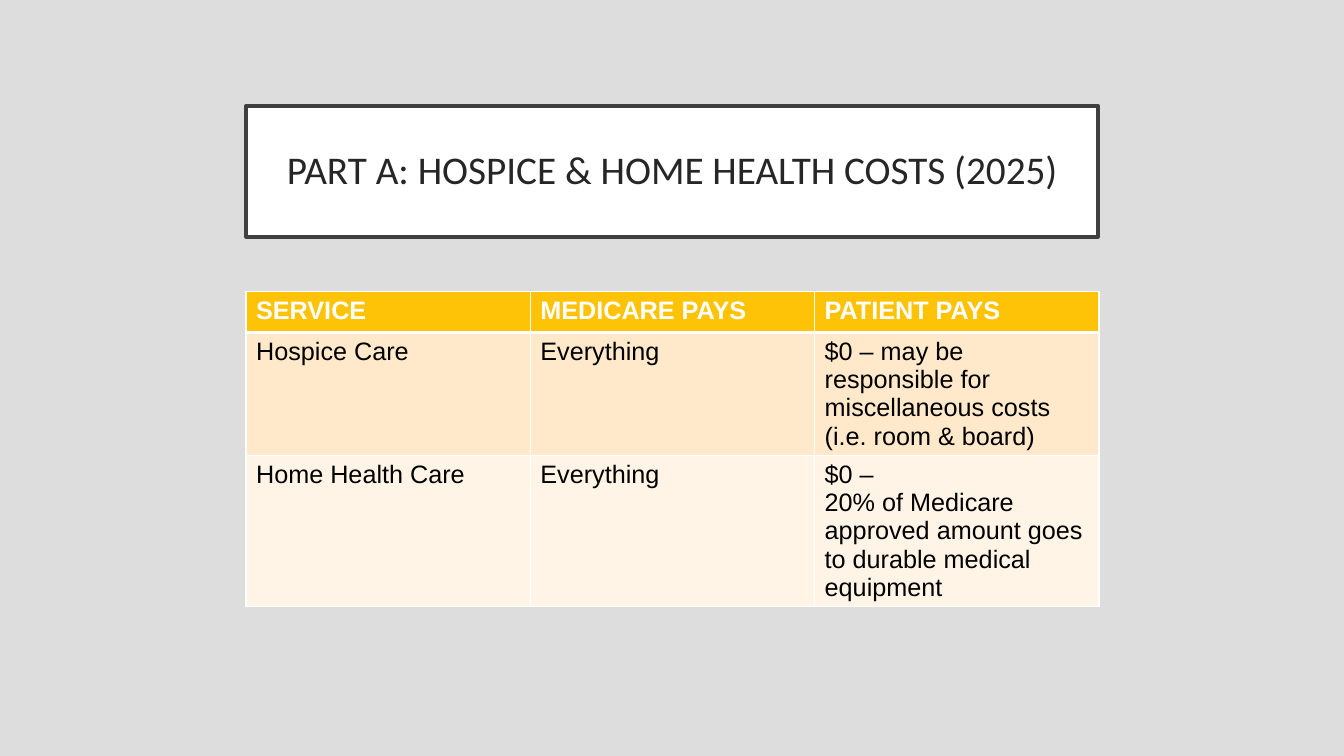
from dataclasses import dataclass

from lxml.etree import SubElement
from pptx import Presentation
from pptx.dml.color import RGBColor
from pptx.enum.shapes import MSO_SHAPE as Preset
from pptx.enum.text import MSO_ANCHOR as Anchor, PP_ALIGN as Align
from pptx.oxml.ns import qn
from pptx.slide import Slide
from pptx.table import _Cell as Cell
from pptx.text.text import TextFrame
from pptx.util import Inches, Pt

BACKGROUND = RGBColor(0xDD, 0xDD, 0xDD)
WHITE = RGBColor(0xFF, 0xFF, 0xFF)
BLACK = RGBColor(0x00, 0x00, 0x00)
FRAME = RGBColor(0x3F, 0x3F, 0x3F)
HEADING = RGBColor(0x26, 0x26, 0x26)
GOLD = RGBColor(0xFE, 0xC3, 0x06)
PEACH = RGBColor(0xFF, 0xE9, 0xCA)
CREAM = RGBColor(0xFF, 0xF4, 0xE6)

LEFT = Inches(2.44)
COLUMN_WIDTH = Inches(2.82)
TITLE_FONT = {"name": "Calibri", "size": Pt(28), "bold": False}
HEADER_FONT = {"name": "Arial", "size": Pt(18), "bold": True}
BODY_FONT = HEADER_FONT | {"bold": False}
TITLE_FRAME = {
    "word_wrap": True,
    "vertical_anchor": Anchor.MIDDLE,
    "margin_left": Inches(0.2),
    "margin_right": Inches(0.2),
    "margin_top": Inches(0.2),
    "margin_bottom": Inches(0.2),
}
CELL_MARGINS = {
    "margin_left": Inches(0.1),
    "margin_right": Inches(0.1),
    "margin_top": Inches(0.05),
    "margin_bottom": Inches(0.05),
}


@dataclass
class CostRow:
    service: str
    medicare_pays: str
    patient_pays: str
    height: float
    fill: RGBColor
    color: RGBColor
    font: dict
    top_rule: float = 1
    bottom_rule: float = 1


COST_ROWS = [
    CostRow("SERVICE", "MEDICARE PAYS", "PATIENT PAYS",
            0.41, GOLD, WHITE, HEADER_FONT, bottom_rule=3),
    CostRow("Hospice Care", "Everything",
            "$0 – may be responsible for miscellaneous costs (i.e. room & board)",
            1.22, PEACH, BLACK, BODY_FONT, top_rule=3),
    CostRow("Home Health Care", "Everything",
            "$0 –\n20% of Medicare approved amount goes to durable medical equipment",
            1.5, CREAM, BLACK, BODY_FONT),
]


def apply(target: object, values: dict) -> None:
    for name, value in values.items():
        setattr(target, name, value)


def write(frame: TextFrame, text: str, font: dict, color: RGBColor) -> None:
    frame.text = text
    for paragraph in frame.paragraphs:
        for run in paragraph.runs:
            apply(run.font, font)
            run.font.color.rgb = color


def add_rules(cell: Cell, row: CostRow) -> None:
    properties = cell._tc.get_or_add_tcPr()
    rules = {"a:lnL": 1, "a:lnR": 1, "a:lnT": row.top_rule, "a:lnB": row.bottom_rule}
    for side, width in rules.items():
        rule = SubElement(properties, qn(side), w=str(Pt(width)))
        SubElement(SubElement(rule, qn("a:solidFill")), qn("a:srgbClr"), val=str(WHITE))


def add_title(slide: Slide) -> None:
    title = slide.shapes.add_shape(
        Preset.RECTANGLE, LEFT, Inches(1.05), Inches(8.45), Inches(1.3))
    title.shadow.inherit = False
    title.fill.solid()
    title.fill.fore_color.rgb = WHITE
    title.line.color.rgb = FRAME
    title.line.width = Pt(2.5)
    apply(title.text_frame, TITLE_FRAME)
    write(title.text_frame, "PART A: HOSPICE & HOME HEALTH COSTS (2025)",
          TITLE_FONT, HEADING)
    apply(title.text_frame.paragraphs[0],
          {"alignment": Align.CENTER, "line_spacing": 0.9})


def add_costs(slide: Slide) -> None:
    height = Inches(sum(row.height for row in COST_ROWS))
    costs = slide.shapes.add_table(
        len(COST_ROWS), 3, LEFT, Inches(2.89), COLUMN_WIDTH * 3, height).table
    for column in costs.columns:
        column.width = COLUMN_WIDTH
    for line, row in zip(costs.rows, COST_ROWS):
        line.height = Inches(row.height)
        entries = (row.service, row.medicare_pays, row.patient_pays)
        for cell, entry in zip(line.cells, entries):
            apply(cell, CELL_MARGINS)
            add_rules(cell, row)
            cell.fill.solid()
            cell.fill.fore_color.rgb = row.fill
            write(cell.text_frame, entry, row.font, row.color)


def main() -> None:
    deck = Presentation()
    apply(deck, {"slide_width": Inches(13.33), "slide_height": Inches(7.5)})
    slide = deck.slides.add_slide(deck.slide_layouts[6])
    slide.background.fill.solid()
    slide.background.fill.fore_color.rgb = BACKGROUND
    add_title(slide)
    add_costs(slide)
    deck.save("out.pptx")


if __name__ == "__main__":
    main()
